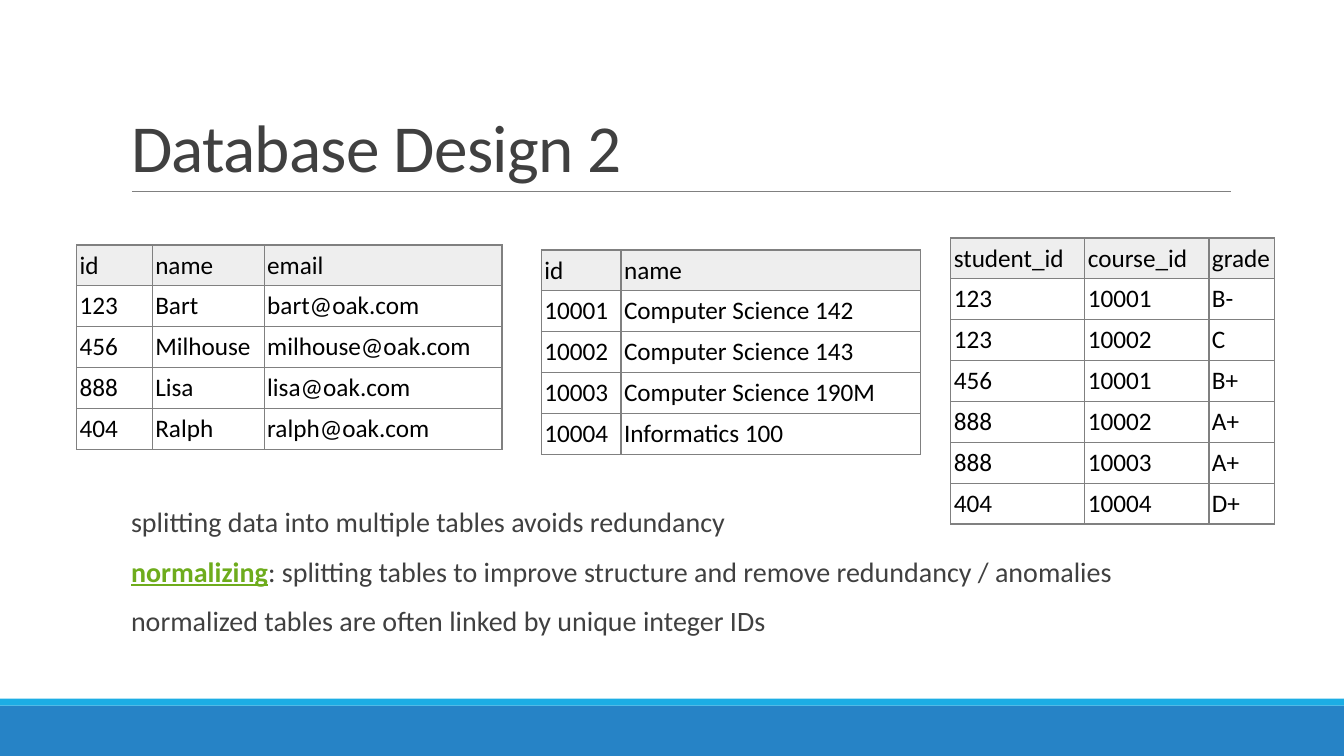
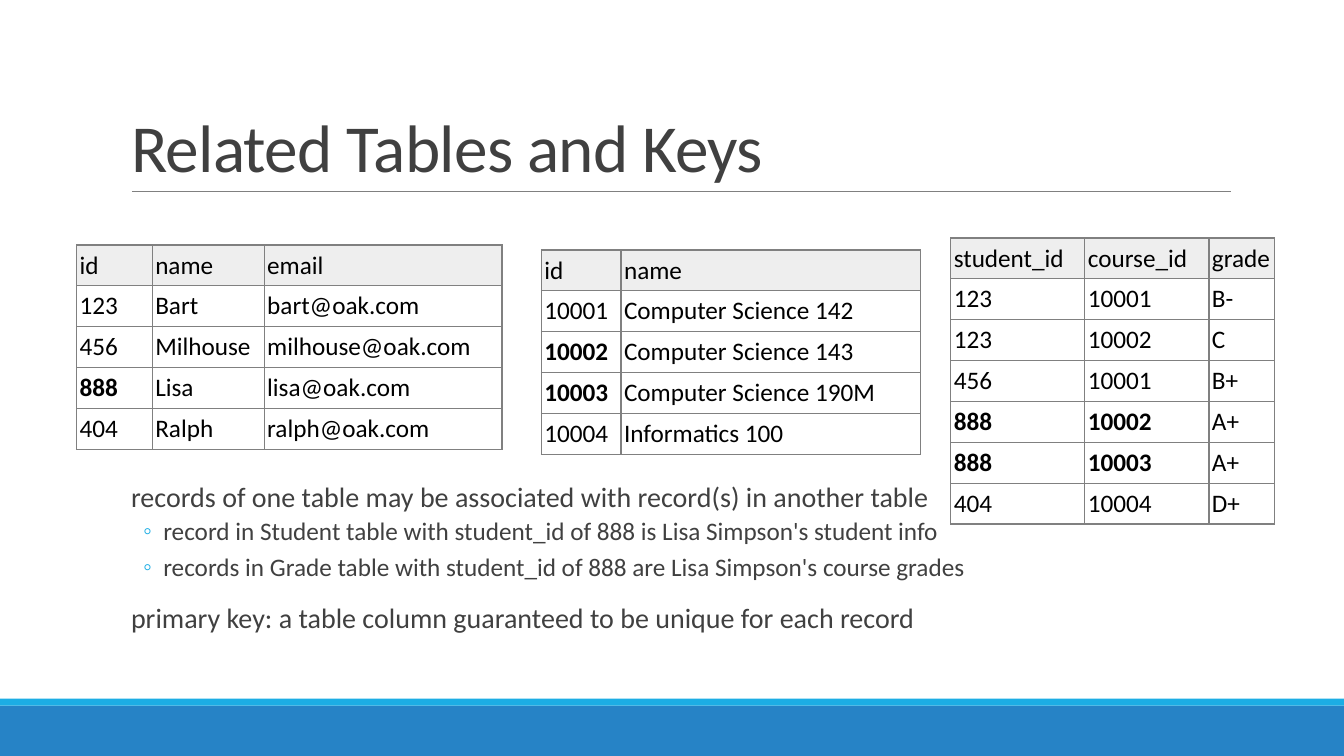
from lxml import etree
from pptx import Presentation
from pptx.dml.color import RGBColor
from pptx.enum.shapes import MSO_CONNECTOR, MSO_SHAPE
from pptx.enum.text import MSO_ANCHOR, MSO_AUTO_SIZE as AUTO_SIZE, PP_ALIGN
from pptx.oxml import parse_xml
from pptx.oxml.ns import nsdecls, qn
from pptx.util import Inches, Pt

# Palette and font
FONT = "Calibri"
BLUE = RGBColor(0x26, 0x83, 0xC6)
CYAN = RGBColor(0x1C, 0xAD, 0xE4)
GREEN = RGBColor(0x6E, 0xAC, 0x1C)
DARK = RGBColor(0x40, 0x40, 0x40)
GRAY = RGBColor(0x80, 0x80, 0x80)
LIGHT = RGBColor(0xEE, 0xEE, 0xEE)
WHITE = RGBColor(0xFF, 0xFF, 0xFF)
BLACK = RGBColor(0, 0, 0)

# Grid: a hundred columns by a hundred rows
WIDTH, HEIGHT = Inches(13.33), Inches(7.5)
COLUMN, ROW = WIDTH / 100, HEIGHT / 100
BODY_LEFT, BODY_WIDTH, BODY_BOTTOM = 9, 82.5, 85.6
TITLE_TOP, TITLE_BOTTOM = 4.13, 25.33
TABLE_ROW = 5.33

# Per list level: size, left margin, hanging indent, space before and after, bullet
LEVELS = [
    (20, 0.1, -0.1, 12, 2, " "),
    (18, 0.42, -0.2, 2, 4, "◦"),
]

# Tables: left, top, column widths, cells
TABLES = [
    (5.7, 32.4, (5.63, 8.33, 17.7), [
        ("id", "name", "email"),
        ("123", "Bart", "bart@oak.com"),
        ("456", "Milhouse", "milhouse@oak.com"),
        ("888", "Lisa", "lisa@oak.com"),
        ("404", "Ralph", "ralph@oak.com"),
    ]),
    (40.28, 33.07, (5.93, 22.28), [
        ("id", "name"),
        ("10001", "Computer Science 142"),
        ("10002", "Computer Science 143"),
        ("10003", "Computer Science 190M"),
        ("10004", "Informatics 100"),
    ]),
    (70.74, 31.47, (9.98, 9.23, 4.88), [
        ("student_id", "course_id", "grade"),
        ("123", "10001", "B-"),
        ("123", "10002", "C"),
        ("456", "10001", "B+"),
        ("888", "10002", "A+"),
        ("888", "10003", "A+"),
        ("404", "10004", "D+"),
    ]),
]

# Slides: title, list top, list of (level, runs), keys in bold
SLIDES = [
    ("Database Design 2", 66.53, [
        (0, [("splitting data into multiple tables avoids redundancy", {})]),
        (0, [("normalizing", {"color": GREEN, "bold": True, "underline": True}),
             (": splitting tables to improve structure and remove redundancy / anomalies", {})]),
        (0, [("normalized tables are often linked by unique integer IDs", {})]),
    ], set()),
    ("Related Tables and Keys", 63.2, [
        (0, [("records of one table may be associated with record(s) in another table", {})]),
        (1, [("record in Student table with student_id of 888 is Lisa Simpson's student info", {})]),
        (1, [("records in Grade table with student_id of 888 are Lisa Simpson's course grades", {})]),
        (0, [("primary key: a table column guaranteed to be unique for each record", {})]),
    ], {"888", "10002", "10003"}),
]


def add_text(paragraph, text, size=18, color=DARK, bold=False, underline=False, spacing=None):
    run = paragraph.add_run()
    run.text = text
    run.font.name, run.font.size = FONT, Pt(size)
    run.font.color.rgb = color
    run.font.bold, run.font.underline = bold, underline
    if spacing is not None:
        run.font._element.set("spc", str(int(spacing * 100)))


def place(shape, left, top, width, height):
    shape.left, shape.top = round(left * COLUMN), round(top * ROW)
    shape.width, shape.height = round(width * COLUMN), round(height * ROW)


presentation = Presentation()
presentation.slide_width, presentation.slide_height = WIDTH, HEIGHT
layout = presentation.slide_layouts[1]
slides = [presentation.slides.add_slide(layout) for _ in SLIDES]

# Shared layout: title position, footer bands and title rule
place(layout.placeholders[0], BODY_LEFT, TITLE_TOP, BODY_WIDTH, TITLE_BOTTOM - TITLE_TOP)
for top, height, color in [(93.33, 6.67, BLUE), (92.4, 0.93, CYAN)]:
    band = slides[0].shapes.add_shape(MSO_SHAPE.RECTANGLE, 0, 0, 0, 0)
    place(band, 0, top, 100, height)
    band.shadow.inherit = False
    band.fill.solid()
    band.fill.fore_color.rgb = color
    band.line.fill.background()
    layout.shapes.element.append(band.element)
rule_y = round(TITLE_BOTTOM * ROW)
rule = slides[0].shapes.add_connector(
    MSO_CONNECTOR.STRAIGHT, round(9.82 * COLUMN), rule_y, round(91.6 * COLUMN), rule_y)
rule.line.color.rgb, rule.line.width = GRAY, Pt(0.5)
etree.SubElement(rule.element.spPr, qn("a:effectLst"))
layout.shapes.element.append(rule.element)

for slide, (title, list_top, items, bold_keys) in zip(slides, SLIDES):
    # Title
    frame = slide.shapes.title.text_frame
    frame.vertical_anchor, frame.auto_size = MSO_ANCHOR.BOTTOM, AUTO_SIZE.NONE
    paragraph = frame.paragraphs[0]
    paragraph.alignment, paragraph.line_spacing = PP_ALIGN.LEFT, 0.85
    add_text(paragraph, title, size=48, spacing=-0.5)

    # List
    body = slide.placeholders[1]
    place(body, BODY_LEFT, list_top, BODY_WIDTH, BODY_BOTTOM - list_top)
    frame = body.text_frame
    frame.auto_size = AUTO_SIZE.NONE
    frame.margin_left = frame.margin_right = 0
    for index, (level, runs) in enumerate(items):
        paragraph = frame.add_paragraph() if index else frame.paragraphs[0]
        size, margin, indent, before, after, bullet = LEVELS[level]
        paragraph.level, paragraph.line_spacing = level, 0.9
        paragraph.space_before, paragraph.space_after = Pt(before), Pt(after)
        properties = paragraph._p.get_or_add_pPr()
        properties.set("marL", str(Inches(margin)))
        properties.set("indent", str(Inches(indent)))
        bullet_color = etree.SubElement(properties, qn("a:buClr"))
        etree.SubElement(bullet_color, qn("a:srgbClr"), val=str(CYAN))
        etree.SubElement(properties, qn("a:buChar"), char=bullet)
        for text, text_format in runs:
            add_text(paragraph, text, size=size, **text_format)

    # Tables
    for left, top, widths, rows in TABLES:
        graphic = slide.shapes.add_table(
            len(rows), len(widths), round(left * COLUMN), round(top * ROW),
            round(sum(widths) * COLUMN), round(len(rows) * TABLE_ROW * ROW))
        table = graphic.table
        table.horz_banding = table.first_row = False
        for column, width in zip(table.columns, widths):
            column.width = round(width * COLUMN)
        for row_index, values in enumerate(rows):
            for column_index, value in enumerate(values):
                cell = table.cell(row_index, column_index)
                cell.vertical_anchor = MSO_ANCHOR.MIDDLE
                cell.margin_left = cell.margin_right = Inches(0.03)
                cell.fill.solid()
                cell.fill.fore_color.rgb = WHITE if row_index else LIGHT
                is_key = values[0] in bold_keys and value in bold_keys
                add_text(cell.text_frame.paragraphs[0], value, color=BLACK, bold=is_key)
                for position, side in enumerate("LRTB"):
                    cell._tc.get_or_add_tcPr().insert(position, parse_xml(
                        f'<a:ln{side} {nsdecls("a")} w="{Pt(1)}"><a:solidFill>'
                        f'<a:srgbClr val="{GRAY}"/></a:solidFill></a:ln{side}>'))

presentation.save("out.pptx")
